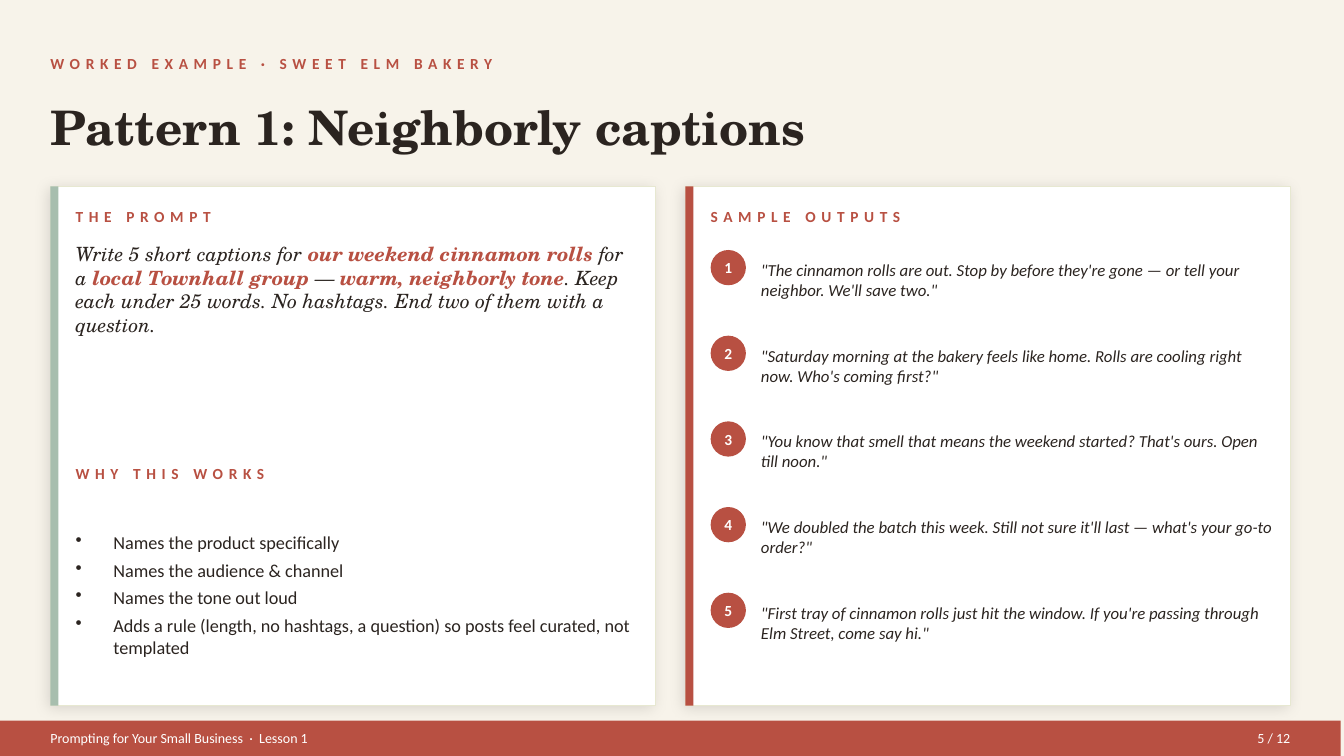
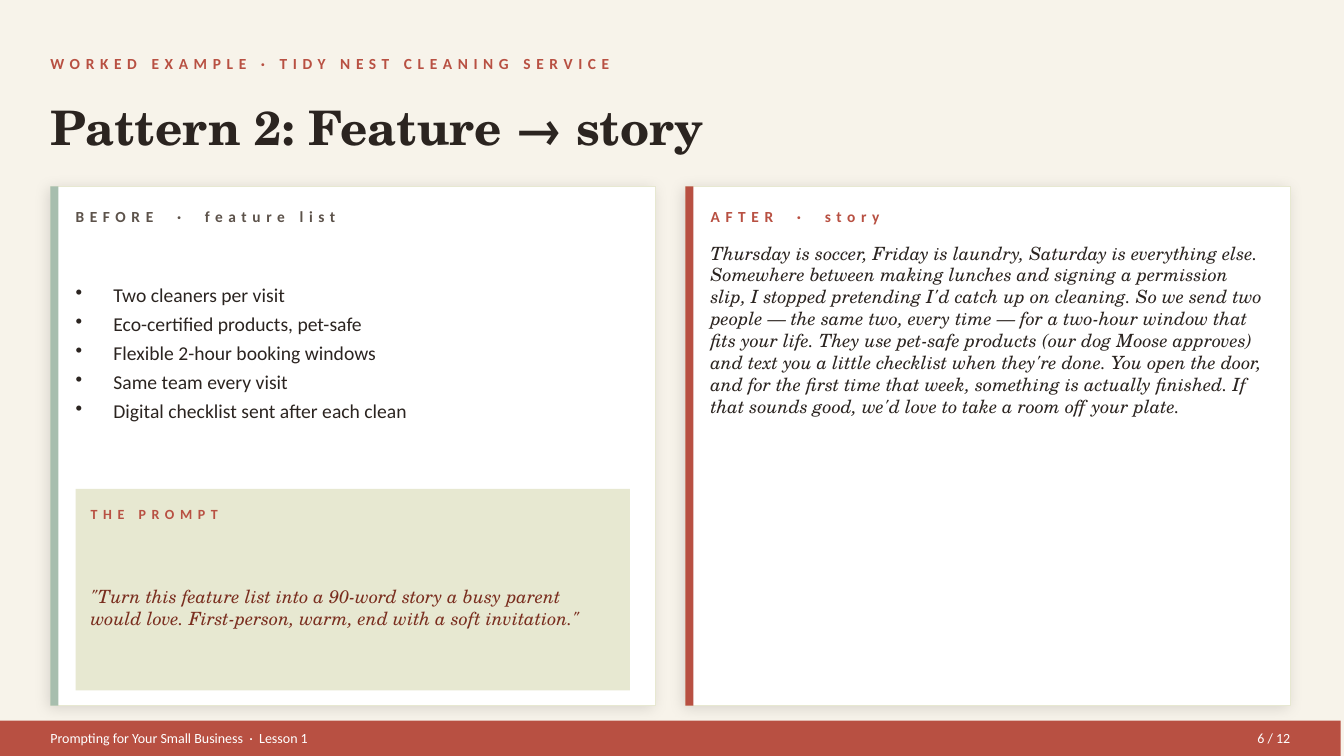
from lxml import etree
from pptx import Presentation
from pptx.dml.color import RGBColor
from pptx.enum.shapes import MSO_SHAPE
from pptx.enum.text import MSO_ANCHOR, MSO_AUTO_SIZE, PP_ALIGN
from pptx.oxml.ns import qn
from pptx.util import Pt

RECT, OVAL = MSO_SHAPE.RECTANGLE, MSO_SHAPE.OVAL
TOP, MIDDLE = MSO_ANCHOR.TOP, MSO_ANCHOR.MIDDLE
LEFT, CENTER, RIGHT = PP_ALIGN.LEFT, PP_ALIGN.CENTER, PP_ALIGN.RIGHT

# Theme
SANS, SERIF = "Calibri", "TeX Gyre Schola"
CREAM, WHITE, SAND, SAGE = "F7F3EA", "FFFFFF", "E7E8D1", "A7BEAE"
BRICK, MAROON, INK, GRAY = "B85042", "7A2E1F", "2B2420", "5C524A"

# Content
COURSE = "Prompting for Your Small Business  ·  Lesson 1"
PAGES = 12
CAPTIONS = {
    "page": 5,
    "eyebrow": "WORKED EXAMPLE · SWEET ELM BAKERY",
    "title": "Pattern 1: Neighborly captions",
    "heads": [("THE PROMPT", BRICK), ("SAMPLE OUTPUTS", BRICK)],
    # Each run: text, emphasised
    "prompt": [
        ("Write 5 short captions for ", False),
        ("our weekend cinnamon rolls", True),
        (" for a ", False),
        ("local Townhall group", True),
        (" — ", False),
        ("warm, neighborly tone", True),
        (". Keep each under 25 words. No hashtags. "
         "End two of them with a question.", False),
    ],
    "why_head": "WHY THIS WORKS",
    "why": [
        "Names the product specifically",
        "Names the audience & channel",
        "Names the tone out loud",
        "Adds a rule (length, no hashtags, a question) so posts feel curated, "
        "not templated",
    ],
    "samples": [
        "\"The cinnamon rolls are out. Stop by before they're gone — or tell "
        "your neighbor. We'll save two.\"",
        "\"Saturday morning at the bakery feels like home. Rolls are cooling "
        "right now. Who's coming first?\"",
        "\"You know that smell that means the weekend started? That's ours. "
        "Open till noon.\"",
        "\"We doubled the batch this week. Still not sure it'll last — what's "
        "your go-to order?\"",
        "\"First tray of cinnamon rolls just hit the window. If you're passing "
        "through Elm Street, come say hi.\"",
    ],
}
STORY = {
    "page": 6,
    "eyebrow": "WORKED EXAMPLE · TIDY NEST CLEANING SERVICE",
    "title": "Pattern 2: Feature → story",
    "heads": [("BEFORE  ·  feature list", GRAY), ("AFTER  ·  story", BRICK)],
    "features": [
        "Two cleaners per visit",
        "Eco-certified products, pet-safe",
        "Flexible 2-hour booking windows",
        "Same team every visit",
        "Digital checklist sent after each clean",
    ],
    "prompt_head": "THE PROMPT",
    "prompt": "\"Turn this feature list into a 90-word story a busy parent would "
              "love. First-person, warm, end with a soft invitation.\"",
    "story": "Thursday is soccer, Friday is laundry, Saturday is everything else. "
             "Somewhere between making lunches and signing a permission slip, I "
             "stopped pretending I'd catch up on cleaning. So we send two people "
             "— the same two, every time — for a two-hour window that fits your "
             "life. They use pet-safe products (our dog Moose approves) and text "
             "you a little checklist when they're done. You open the door, and "
             "for the first time that week, something is actually finished. If "
             "that sounds good, we'd love to take a room off your plate.",
}

# Layout, in points
SLIDE_W, SLIDE_H = 960, 540
MARGIN = 36
CARD_W, CARD_H, CARD_TOP, CARD_GAP = 432, 370.8, 133.2, 21.6
PAD, INNER_W = 18, 396
CARD_X = [MARGIN + i * (CARD_W + CARD_GAP) for i in range(2)]
BEFORE_X, AFTER_X = [x + PAD for x in CARD_X]
HEAD_TOP, HEAD_H, BODY_TOP = 144, 21.6, 172.8
BAND_TOP, BAND_H, BAND_W = 514.8, 25.2, 957.6
SAMPLE_STEP, SAMPLE_H, BADGE = 61.2, 54, 25.2
BULLET_INDENT = 27


def rgb(color):
    return RGBColor.from_string(color)


def place(sp, x, y, w, h):
    sp.left, sp.top, sp.width, sp.height = Pt(x), Pt(y), Pt(w), Pt(h)


def add_run(p, text, size, color, font=SANS, bold=False, italic=False, spacing=0):
    r = p.add_run()
    r.text = text
    f = r.font
    f.name, f.size, f.bold, f.italic = font, Pt(size), bold, italic
    f.color.rgb = rgb(color)
    if spacing:
        r._r.get_or_add_rPr().set("spc", str(spacing * 100))


def frame(sp, anchor=MIDDLE, align=LEFT):
    """Prepare a text frame without insets; return its first paragraph."""
    tf = sp.text_frame
    tf.word_wrap, tf.auto_size, tf.vertical_anchor = True, MSO_AUTO_SIZE.NONE, anchor
    tf.margin_left = tf.margin_top = tf.margin_right = tf.margin_bottom = 0
    p = tf.paragraphs[0]
    p.alignment = align
    return p


def textbox(s, box, anchor=MIDDLE, align=LEFT):
    return frame(s.shapes.add_textbox(*map(Pt, box)), anchor, align)


def add_text(s, box, text, size, color, anchor=MIDDLE, align=LEFT, **style):
    add_run(textbox(s, box, anchor, align), text, size, color, **style)


def label(s, box, text, color=BRICK, size=11):
    add_text(s, box, text, size, color, bold=True, spacing=4)


def bullets(s, box, items, size):
    p = textbox(s, box)
    tf = s.shapes[-1].text_frame
    for i, item in enumerate(items):
        if i:
            p = tf.add_paragraph()
        pPr = p._p.get_or_add_pPr()
        pPr.set("marL", str(Pt(BULLET_INDENT)))
        pPr.set("indent", str(-Pt(BULLET_INDENT)))
        etree.SubElement(pPr, qn("a:buChar"), char="•")
        p.space_after = Pt(4)
        add_run(p, item, size, INK)


def shape(s, kind, box, fill, line=None):
    sp = s.shapes.add_shape(kind, *map(Pt, box))
    sp.shadow.inherit = False
    sp.fill.solid()
    sp.fill.fore_color.rgb = rgb(fill)
    if line:
        sp.line.color.rgb, sp.line.width = rgb(line), Pt(0.5)
    else:
        sp.line.fill.background()
    return sp


def soft_shadow(sp):
    effects = sp._element.spPr.find(qn("a:effectLst"))
    outer = etree.SubElement(effects, qn("a:outerShdw"), blurRad=str(Pt(10)),
                             dist=str(Pt(2)), dir=str(135 * 60000),
                             algn="bl", rotWithShape="0")
    color = etree.SubElement(outer, qn("a:srgbClr"), val="000000")
    etree.SubElement(color, qn("a:alpha"), val="12000")


def start_slide(prs, content):
    """Add the eyebrow, the title and the two headed cards."""
    s = prs.slides.add_slide(prs.slide_layouts[5])
    label(s, (MARGIN, 32.4, 720, 25.2), content["eyebrow"])
    title = s.shapes.title
    place(title, MARGIN, 57.6, 885.6, 64.8)
    add_run(frame(title), content["title"], 34, INK, font=SERIF, bold=True)
    for x, accent, (head, color) in zip(CARD_X, (SAGE, BRICK), content["heads"]):
        soft_shadow(shape(s, RECT, (x, CARD_TOP, CARD_W, CARD_H), WHITE, SAND))
        shape(s, RECT, (x, CARD_TOP, 5.76, CARD_H), accent)
        label(s, (x + PAD, HEAD_TOP, INNER_W, HEAD_H), head, color)
    return s


def add_footer(s, page):
    shape(s, RECT, (0, BAND_TOP, BAND_W, BAND_H), BRICK)
    add_text(s, (MARGIN, BAND_TOP, 576, BAND_H), COURSE, 10, WHITE)
    add_text(s, (864, BAND_TOP, 57.6, BAND_H), f"{page} / {PAGES}", 10, WHITE,
             align=RIGHT)


def captions_slide(prs):
    c = CAPTIONS
    s = start_slide(prs, c)
    # Prompt, with its key phrases picked out
    p = textbox(s, (BEFORE_X, BODY_TOP, INNER_W, 144), TOP)
    for text, strong in c["prompt"]:
        add_run(p, text, 14, BRICK if strong else INK, font=SERIF,
                bold=strong, italic=True)
    # Reasons
    label(s, (BEFORE_X, 327.6, INNER_W, HEAD_H), c["why_head"])
    bullets(s, (BEFORE_X, 352.8, INNER_W, 144), c["why"], 13)
    # Numbered samples
    for i, sample in enumerate(c["samples"]):
        y = BODY_TOP + i * SAMPLE_STEP
        badge = shape(s, OVAL, (AFTER_X, y + 5.76, BADGE, BADGE), BRICK)
        add_run(frame(badge, align=CENTER), str(i + 1), 11, WHITE, bold=True)
        add_text(s, (AFTER_X + 36, y, 367.2, SAMPLE_H), sample, 12, INK, italic=True)
    add_footer(s, c["page"])


def story_slide(prs):
    c = STORY
    s = start_slide(prs, c)
    bullets(s, (BEFORE_X, BODY_TOP, INNER_W, 158.4), c["features"], 14)
    # Prompt panel
    panel_top, inset = 349.2, 10.8
    x, w = BEFORE_X + inset, INNER_W - 2 * inset
    shape(s, RECT, (BEFORE_X, panel_top, INNER_W, 144), SAND)
    label(s, (x, panel_top + 7.2, w, HEAD_H), c["prompt_head"], size=10)
    add_text(s, (x, panel_top + 32.4, w, 104.4), c["prompt"], 13, MAROON,
             font=SERIF, italic=True)
    # Story
    add_text(s, (AFTER_X, BODY_TOP, INNER_W, 316.8), c["story"], 13, INK, TOP,
             font=SERIF, italic=True)
    add_footer(s, c["page"])


def main():
    prs = Presentation()
    prs.slide_width, prs.slide_height = Pt(SLIDE_W), Pt(SLIDE_H)
    background = prs.slide_master.background.fill
    background.solid()
    background.fore_color.rgb = rgb(CREAM)
    captions_slide(prs)
    story_slide(prs)
    prs.save("out.pptx")


if __name__ == "__main__":
    main()
